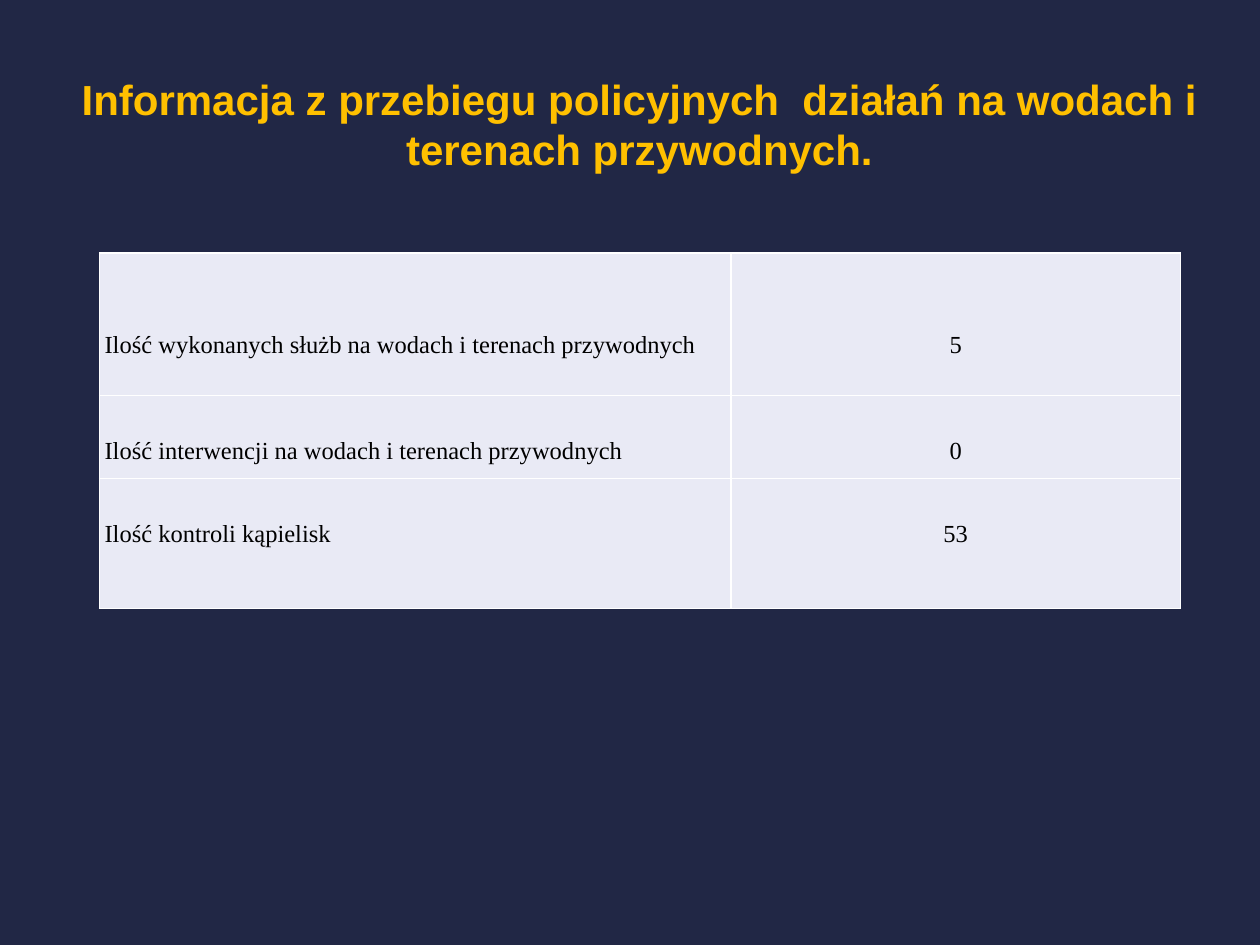
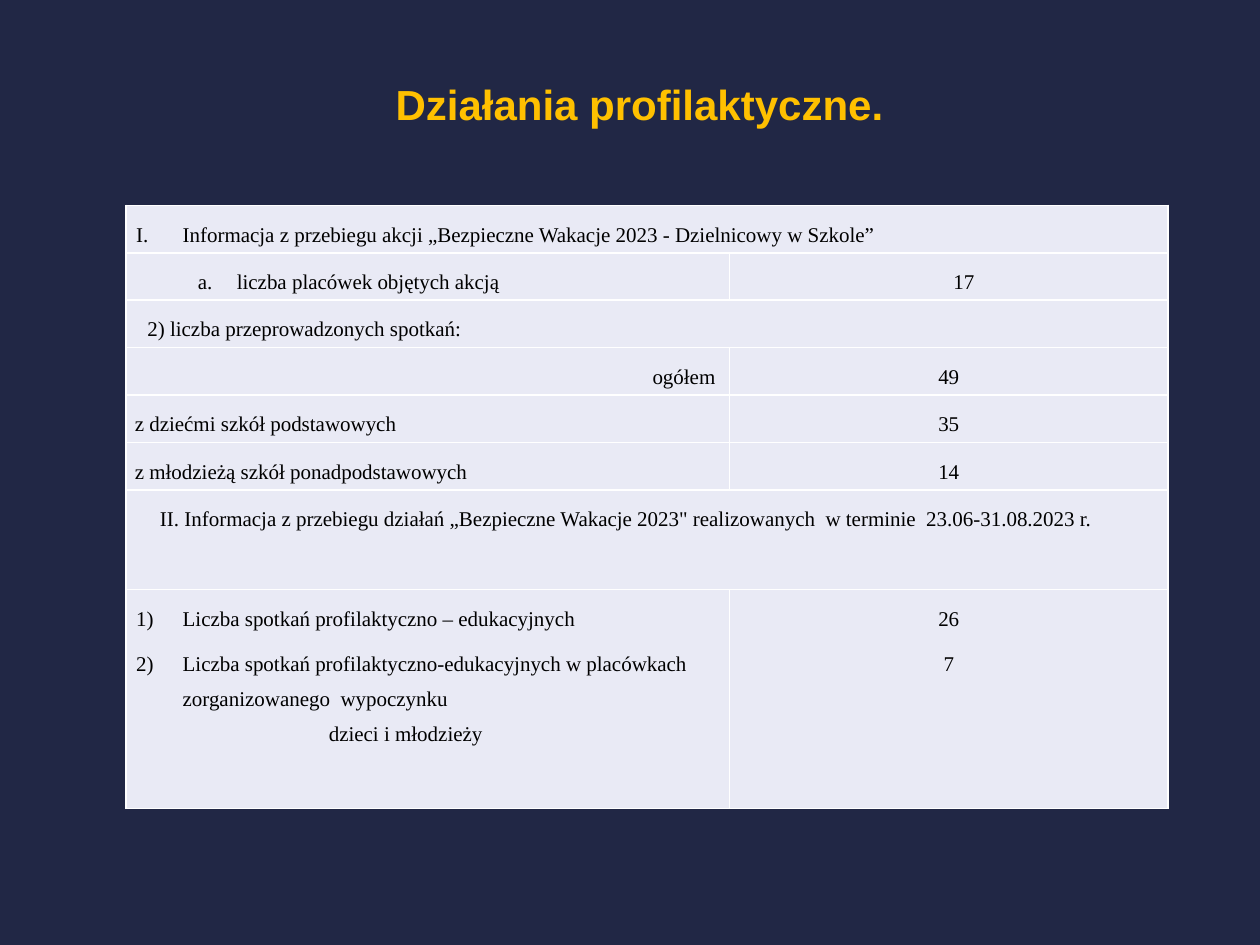
"""Build two slides with tables on police water patrols and prevention work."""
import pptx
import pptx.dml.color
import pptx.enum.text
import pptx.oxml.ns
import pptx.util
from lxml import etree

Inches = pptx.util.Inches
Pt = pptx.util.Pt
ALIGN = pptx.enum.text.PP_ALIGN
COLORS = {"background": "212745", "title": "FFC000", "cell": "E9EAF5",
          "border": "FFFFFF", "text": "000000"}
LINE_HEIGHT = 2.26 / 6


def add_element(parent, tag, **attributes):
    element = etree.SubElement(parent, pptx.oxml.ns.qn(tag))
    for name, value in attributes.items():
        element.set(name, str(value))
    return element


def item(text, left=0, hanging=0, numbering=None, align=ALIGN.LEFT, before=6):
    return {"text": text, "left": left, "hanging": hanging,
            "numbering": numbering, "align": align, "before": before}


water_rows = [
    (1.13, 0.62, "Ilość wykonanych służb na wodach i terenach przywodnych", "5"),
    (0.66, 0.33, "Ilość interwencji na wodach i terenach przywodnych", "0"),
    (1.03, 0.33, "Ilość kontroli kąpielisk", "53"),
]
prevention_rows = [
    (LINE_HEIGHT, [item("Informacja z przebiegu akcji „Bezpieczne Wakacje 2023 - Dzielnicowy w Szkole”",
                        0.38, 0.37, "romanUcPeriod")], None),
    (LINE_HEIGHT, [item("liczba placówek objętych akcją", 0.81, 0.31, "alphaLcPeriod")],
     [item("17", 0.24, align=ALIGN.CENTER)]),
    (LINE_HEIGHT, [item("2) liczba przeprowadzonych spotkań:", 0.1)], None),
    (LINE_HEIGHT, [item("ogółem ", align=ALIGN.RIGHT)], [item("49", align=ALIGN.CENTER)]),
    (LINE_HEIGHT, [item("z dziećmi szkół podstawowych")], [item("35", align=ALIGN.CENTER)]),
    (LINE_HEIGHT, [item("z młodzieżą szkół ponadpodstawowych")], [item("14", align=ALIGN.CENTER)]),
    (0.79, [item("II. Informacja z przebiegu działań „Bezpieczne Wakacje 2023\" realizowanych  "
                 "w terminie  23.06-31.08.2023 r.", 0.2)], None),
    (1.74, [item("Liczba spotkań profilaktyczno – edukacyjnych", 0.38, 0.37, "arabicParenR"),
            item("Liczba spotkań profilaktyczno-edukacyjnych w placówkach zorganizowanego  wypoczynku",
                 0.38, 0.37, "arabicParenR"),
            item("dzieci i młodzieży", 1.54, before=0)],
     [item("26", align=ALIGN.CENTER), item("7", align=ALIGN.CENTER)]),
]
slides = [
    {"title": "Informacja z przebiegu policyjnych  działań na wodach i terenach przywodnych.",
     "title_inset": 0.28, "left": 0.79, "top": 2.01, "columns": [5.01, 3.57],
     "side_margin": 0.04, "size": 14, "spacing": 1,
     "rows": [(height, margin, [item(label, before=0)],
               [item(count, align=ALIGN.CENTER, before=0)])
              for height, margin, label, count in water_rows]},
    {"title": "Działania profilaktyczne.",
     "title_inset": 0.32, "left": 1, "top": 1.63, "columns": [4.79, 3.48],
     "side_margin": 0.07, "size": 12, "spacing": 1.5,
     "rows": [(height, 0.05, label, count) for height, label, count in prevention_rows]},
]

presentation = pptx.Presentation()
presentation.slide_width = Inches(10)
presentation.slide_height = Inches(7.5)

for content in slides:
    slide = presentation.slides.add_slide(presentation.slide_layouts[6])
    slide.background.fill.solid()
    slide.background.fill.fore_color.rgb = pptx.dml.color.RGBColor.from_string(COLORS["background"])

    title = slide.shapes.add_textbox(Inches(0.43), Inches(0.3), Inches(9.29), Inches(1.25))
    title.text_frame.word_wrap = True
    title.text_frame.margin_top = Inches(content["title_inset"])
    paragraph = title.text_frame.paragraphs[0]
    paragraph.text = content["title"]
    paragraph.alignment = ALIGN.CENTER
    paragraph.font.name = "Arial"
    paragraph.font.size = Pt(24)
    paragraph.font.bold = True
    paragraph.font.color.rgb = pptx.dml.color.RGBColor.from_string(COLORS["title"])

    rows, columns = content["rows"], content["columns"]
    table = slide.shapes.add_table(
        len(rows), len(columns), Inches(content["left"]), Inches(content["top"]),
        Inches(sum(columns)), Inches(sum(row[0] for row in rows))).table
    table.first_row = False
    table.horz_banding = False
    for column, width in zip(table.columns, columns):
        column.width = Inches(width)

    for row_index, (height, top_margin, *row_cells) in enumerate(rows):
        table.rows[row_index].height = Inches(height)
        if row_cells[1] is None:
            table.cell(row_index, 0).merge(table.cell(row_index, 1))
        for column_index, items in enumerate(row_cells):
            cell = table.cell(row_index, column_index)
            cell.margin_left = cell.margin_right = Inches(content["side_margin"])
            cell.margin_top = Inches(top_margin)
            cell.margin_bottom = Inches(0.02)
            for side in ("a:lnL", "a:lnR", "a:lnT", "a:lnB"):
                line = add_element(cell._tc.get_or_add_tcPr(), side, w=Pt(0.96))
                add_element(add_element(line, "a:solidFill"), "a:srgbClr", val=COLORS["border"])
            cell.fill.solid()
            cell.fill.fore_color.rgb = pptx.dml.color.RGBColor.from_string(COLORS["cell"])

            for item_index, entry in enumerate(items or []):
                frame = cell.text_frame
                paragraph = frame.add_paragraph() if item_index else frame.paragraphs[0]
                paragraph.text = entry["text"]
                properties = paragraph._p.get_or_add_pPr()
                properties.set("marL", str(Inches(entry["left"])))
                properties.set("indent", str(-Inches(entry["hanging"])))
                if entry["numbering"]:
                    add_element(properties, "a:buAutoNum", type=entry["numbering"])
                paragraph.alignment = entry["align"]
                paragraph.line_spacing = float(content["spacing"])
                paragraph.space_before = Pt(entry["before"])
                paragraph.font.name = "Times New Roman"
                paragraph.font.size = Pt(content["size"])
                paragraph.font.color.rgb = pptx.dml.color.RGBColor.from_string(COLORS["text"])

presentation.save("out.pptx")
